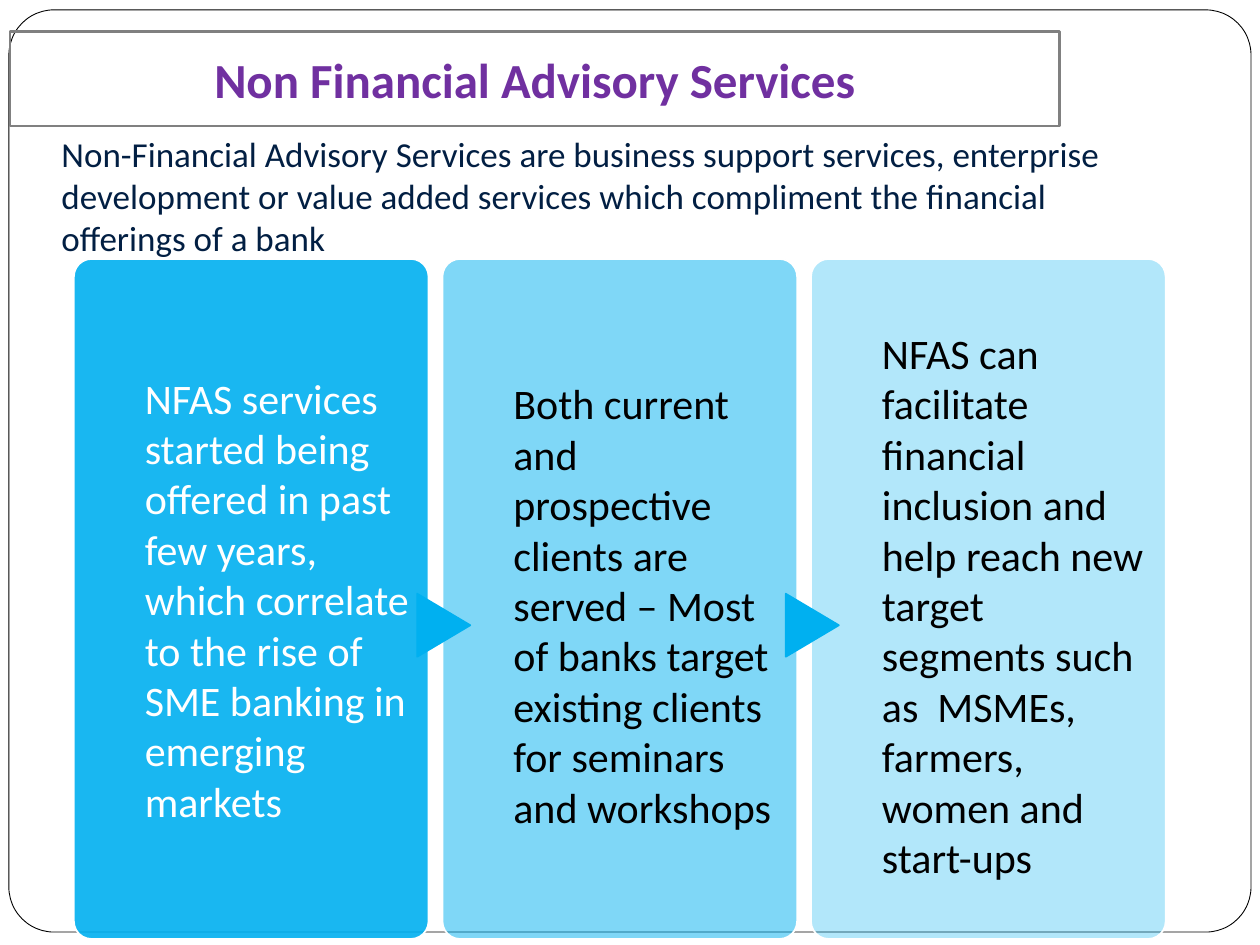
from lxml import etree
from pptx import Presentation
from pptx import util as u
from pptx.dml.color import RGBColor
from pptx.enum import shapes, text
from pptx.oxml.ns import qn

COLORS = {
    "white": "FFFFFF", "black": "000000", "blue": "00B0F0",
    "gray": "808080", "navy": "021F43", "purple": "7030A0",
}
CARDS = [
    ("NFAS services started being offered in past few years, which correlate "
     "to the rise of SME banking in emerging markets", 90, "white", 0),
    ("Both current and prospective clients are served – Most of banks target "
     "existing clients for seminars and workshops", 50, "black", 0.23),
    ("NFAS can facilitate financial inclusion and help reach new target "
     "segments such as  MSMEs, farmers, women and start-ups", 30, "black", 0.23),
]
CARD_LEFT, CARD_TOP, CARD_WIDTH, CARD_HEIGHT, CARD_PITCH = 1.49, 5.22, 7.15, 13.71, 7.43


def rgb(name):
    """Return the named palette colour."""
    return RGBColor.from_string(COLORS[name])


def add_box(slide, kind, bounds, fill=None, opacity=100, line="black", weight=1, corner=None):
    """Draw a preset shape at bounds given in centimetres."""
    shape = slide.shapes.add_shape(kind, *map(u.Cm, bounds))
    shape.shadow.inherit = False
    if corner is not None:
        shape.adjustments[0] = corner
    if fill:
        shape.fill.solid()
        shape.fill.fore_color.rgb = rgb(fill)
        if opacity < 100:
            color = shape.fill._xPr.find(".//" + qn("a:srgbClr"))
            etree.SubElement(color, qn("a:alpha"), val=str(opacity * 1000))
    else:
        shape.fill.background()
    shape.line.color.rgb = rgb(line)
    shape.line.width = u.Pt(weight)
    return shape


def write_text(shape, words, size=24, color="black", bold=False,
               align=text.PP_ALIGN.LEFT, anchor=text.MSO_ANCHOR.MIDDLE, insets=None):
    """Put one formatted paragraph into a shape."""
    frame = shape.text_frame
    frame.word_wrap = True
    frame.vertical_anchor = anchor
    if insets:
        (frame.margin_left, frame.margin_top,
         frame.margin_right, frame.margin_bottom) = map(u.Cm, insets)
    paragraph = frame.paragraphs[0]
    paragraph.alignment = align
    run = paragraph.add_run()
    run.text = words
    run.font.name = "Calibri"
    run.font.size = u.Pt(size)
    run.font.bold = bold
    run.font.color.rgb = rgb(color)


def add_text(slide, bounds, words, **style):
    """Add a text box at bounds given in centimetres."""
    box = slide.shapes.add_textbox(*map(u.Cm, bounds))
    write_text(box, words, **style)


def add_card(slide, index, words, opacity, color, top_inset):
    """Add one step card, with an arrow from the card before it."""
    left = CARD_LEFT + index * CARD_PITCH
    add_box(slide, shapes.MSO_SHAPE.ROUNDED_RECTANGLE,
            (left, CARD_TOP, CARD_WIDTH, CARD_HEIGHT),
            fill="blue", opacity=opacity, line="white", corner=0.05)
    if index:
        arrow = add_box(slide, shapes.MSO_SHAPE.FLOWCHART_EXTRACT,
                        (left - 0.61, 12.07, 1.27, 1.07), fill="blue", line="blue")
        arrow.rotation = 90
    add_text(slide, (left + 1.43, CARD_TOP, 5.35, CARD_HEIGHT), words,
             color=color, insets=(0, top_inset, 0, 0))


def main():
    """Build and save the slide."""
    presentation = Presentation()
    presentation.slide_width, presentation.slide_height = u.Cm(25.4), u.Cm(19.05)
    slide = presentation.slides.add_slide(presentation.slide_layouts[6])
    add_box(slide, shapes.MSO_SHAPE.ROUNDED_RECTANGLE, (0.18, 0.2, 25.04, 18.59),
            fill="white", weight=0.5, corner=0.049)
    for index, card in enumerate(CARDS):
        add_card(slide, index, *card)
    add_text(slide, (0.99, 2.54, 22.73, 2.82),
             "Non-Financial Advisory Services are business support services, "
             "enterprise development or value added services which compliment "
             "the financial offerings of a bank",
             size=20, color="navy", anchor=text.MSO_ANCHOR.TOP)
    title = add_box(slide, shapes.MSO_SHAPE.RECTANGLE, (0.2, 0.63, 21.16, 1.91),
                    line="gray", weight=1.5)
    write_text(title, "Non Financial Advisory Services", size=28, color="purple",
               bold=True, align=text.PP_ALIGN.CENTER)
    presentation.save("out.pptx")


if __name__ == "__main__":
    main()
